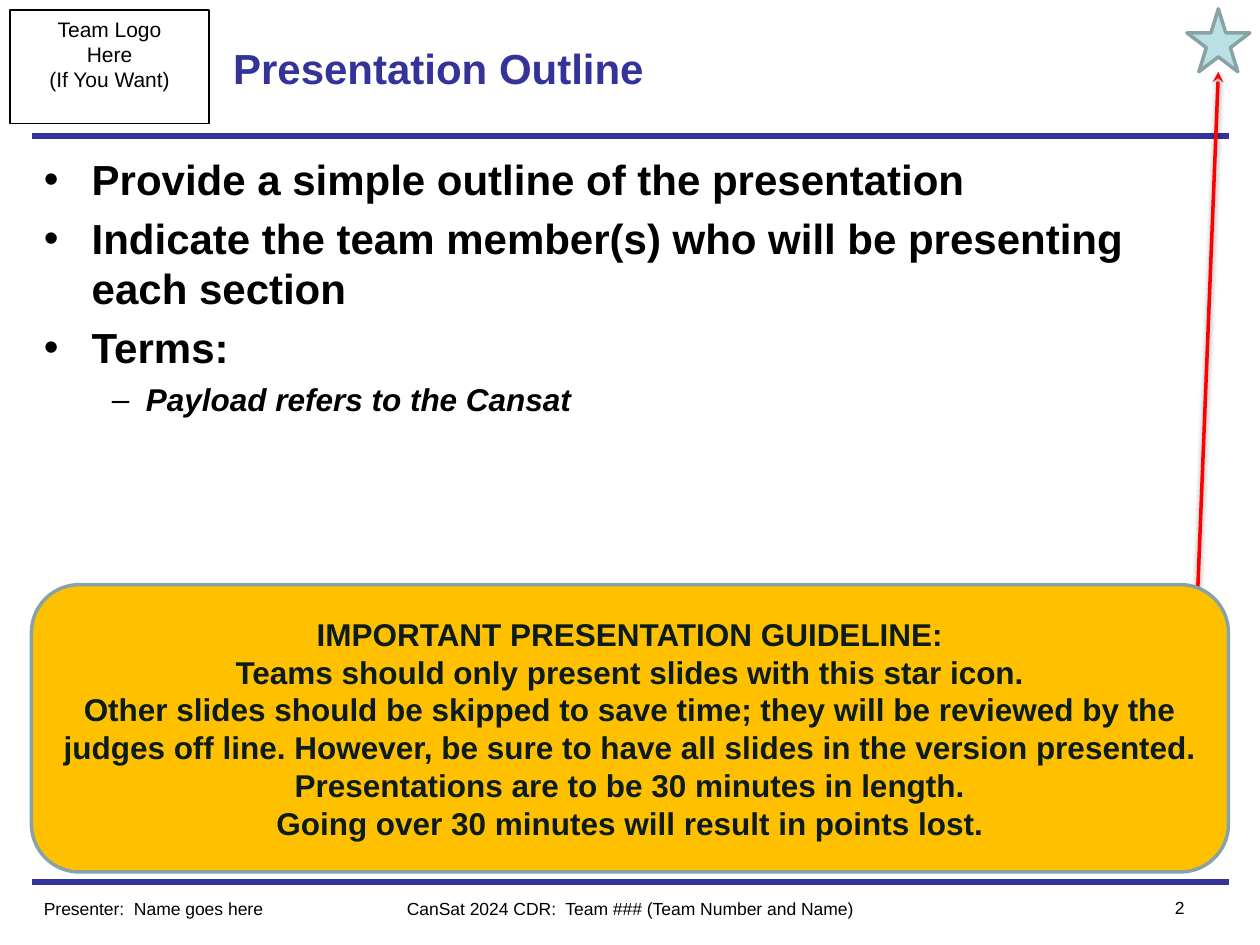
from dataclasses import dataclass

from lxml import etree
from pptx import Presentation
from pptx.dml.color import RGBColor
from pptx.enum.shapes import MSO_CONNECTOR, MSO_SHAPE
from pptx.enum.text import MSO_ANCHOR, PP_ALIGN
from pptx.oxml.ns import qn
from pptx.util import Inches, Pt

LEFT, CENTER, RIGHT = PP_ALIGN.LEFT, PP_ALIGN.CENTER, PP_ALIGN.RIGHT
TOP, MIDDLE = MSO_ANCHOR.TOP, MSO_ANCHOR.MIDDLE
STRAIGHT = MSO_CONNECTOR.STRAIGHT
RECTANGLE, ROUNDED, STAR = MSO_SHAPE.RECTANGLE, MSO_SHAPE.ROUNDED_RECTANGLE, MSO_SHAPE.STAR_5_POINT
TITLE_ONLY = 5


@dataclass(frozen=True)
class Theme:
    font: str = "Arial"
    navy: str = "333399"
    black: str = "000000"
    red: str = "FF0000"
    amber: str = "FFC000"
    pale_teal: str = "BBE0E3"
    teal_edge: str = "88A3A5"
    dark_teal: str = "0C1C1D"
    heading: int = 24
    detail: int = 18
    label: int = 12
    footer: int = 10


THEME = Theme()


def add_xml(parent, tag, **attributes):
    return etree.SubElement(parent, qn(tag), attributes)


class SlideBuilder:
    def __init__(self, theme, slide):
        self.theme = theme
        self.slide = slide

    def fill_text(self, frame, lines, align=LEFT, anchor=TOP, **style):
        """Fill a text frame, one paragraph per line."""
        frame.word_wrap = True
        frame.vertical_anchor = anchor
        for index, line in enumerate(lines):
            paragraph = frame.paragraphs[0] if index == 0 else frame.add_paragraph()
            paragraph.alignment = align
            self.add_run(paragraph, line, **style)

    def add_run(self, paragraph, text, color=THEME.black, **style):
        run = paragraph.add_run()
        run.text = text
        for name, value in {"name": self.theme.font, **style}.items():
            setattr(run.font, name, value)
        run.font.color.rgb = RGBColor.from_string(color)

    def place(self, shape, box):
        for name, value in zip(("left", "top", "width", "height"), box):
            setattr(shape, name, Inches(value))

    def title(self, text, box):
        title = self.slide.shapes.title
        self.place(title, box)
        self.fill_text(title.text_frame, [text], anchor=MIDDLE, color=self.theme.navy,
                       size=Pt(self.theme.heading), bold=True)

    def text(self, lines, box, **style):
        label = self.slide.shapes.add_textbox(*map(Inches, box))
        self.fill_text(label.text_frame, lines, **style)

    def bullets(self, items, levels, box):
        frame = self.slide.shapes.add_textbox(*map(Inches, box)).text_frame
        frame.word_wrap = True
        for index, (level, text) in enumerate(items):
            paragraph = frame.paragraphs[0] if index == 0 else frame.add_paragraph()
            mark, margin, hanging, style = levels[level]
            paragraph.level = level
            properties = paragraph._p.get_or_add_pPr()
            properties.set("marL", str(Inches(margin)))
            properties.set("indent", str(-Inches(hanging)))
            bullet_color = add_xml(properties, "a:buClr")
            add_xml(bullet_color, "a:srgbClr", val=self.theme.black)
            add_xml(properties, "a:buFont", typeface=self.theme.font)
            add_xml(properties, "a:buChar", char=mark)
            if index:
                paragraph.space_before = Pt(4.8)
            self.add_run(paragraph, text, **style)

    def shape(self, kind, box, edge, weight, fill=None):
        shape = self.slide.shapes.add_shape(kind, *map(Inches, box))
        shape.shadow.inherit = False
        if fill:
            shape.fill.solid()
            shape.fill.fore_color.rgb = RGBColor.from_string(fill)
        else:
            shape.fill.background()
        shape.line.color.rgb = RGBColor.from_string(edge)
        shape.line.width = Pt(weight)
        return shape

    def line(self, start, end, color, weight, arrow=False):
        line = self.slide.shapes.add_connector(STRAIGHT, *map(Inches, (*start, *end)))
        line.line.color.rgb = RGBColor.from_string(color)
        line.line.width = Pt(weight)
        properties = line._element.spPr
        effects = add_xml(properties, "a:effectLst")
        if arrow:
            add_xml(properties.find(qn("a:ln")), "a:tailEnd", type="stealth")
            shadow = add_xml(effects, "a:outerShdw", blurRad=str(Pt(3.1)), dist=str(Pt(1.6)),
                             dir="5400000", rotWithShape="0")
            shade = add_xml(shadow, "a:srgbClr", val=self.theme.black)
            add_xml(shade, "a:alpha", val="38000")


def main():
    presentation = Presentation()
    presentation.slide_width, presentation.slide_height = Inches(10), Inches(7.5)
    slide = presentation.slides.add_slide(presentation.slide_layouts[TITLE_ONLY])
    builder = SlideBuilder(THEME, slide)
    margin, content_width = 0.25, 9.5

    # Rules under the header and above the footer
    for rule_y in (7, 1.08):
        builder.line((margin, rule_y), (margin + content_width, rule_y), THEME.navy, 3)

    # Header: team logo space and title
    logo_space = builder.shape(RECTANGLE, (0.08, 0.08, 1.58, 0.9), THEME.black, 0.75)
    builder.fill_text(logo_space.text_frame, ["Team Logo", "Here", "(If You Want)"],
                      align=CENTER, size=Pt(THEME.label))
    builder.title("Presentation Outline", (1.75, 0.08, 5.92, 0.92))

    # Footer
    footers = [
        ("Presenter:  Name goes here", (margin, 7.08, 2.5, 0.27), LEFT),
        ("CanSat 2024 CDR:  Team ### (Team Number and Name)", (3, 7.08, 4, 0.27), CENTER),
        ("2", (8.75, 7.07, 0.75, 0.27), RIGHT),
    ]
    for footer, box, align in footers:
        builder.text([footer], box, align=align, size=Pt(THEME.footer))

    # Outline
    levels = [
        ("•", 0.38, 0.38, {"size": Pt(THEME.heading), "bold": True}),
        ("–", 0.81, 0.27, {"size": Pt(THEME.detail), "bold": True, "italic": True}),
    ]
    outline = [
        (0, "Provide a simple outline of the presentation"),
        (0, "Indicate the team member(s) who will be presenting each section"),
        (0, "Terms:"),
        (1, "Payload refers to the Cansat"),
    ]
    builder.bullets(outline, levels, (margin, 1.17, content_width, 3.83))

    # Star icon and the arrow that points to it from the guideline
    builder.shape(STAR, (9.42, 0.07, 0.5, 0.5), THEME.teal_edge, 2, THEME.pale_teal)
    builder.line((9.5, 4.83), (9.67, 0.57), THEME.red, 2, arrow=True)

    # Guideline panel
    guideline = builder.shape(ROUNDED, (margin, 4.64, content_width, 2.28),
                              THEME.teal_edge, 2, THEME.amber)
    guideline_lines = [
        "IMPORTANT PRESENTATION GUIDELINE:",
        "Teams should only present slides with this star icon.",
        "Other slides should be skipped to save time; they will be reviewed by the judges "
        "off line. However, be sure to have all slides in the version presented.",
        "Presentations are to be 30 minutes in length.",
        "Going over 30 minutes will result in points lost.",
    ]
    builder.fill_text(guideline.text_frame, guideline_lines, align=CENTER, anchor=MIDDLE,
                      color=THEME.dark_teal, size=Pt(THEME.detail), bold=True)

    presentation.save("out.pptx")


if __name__ == "__main__":
    main()
